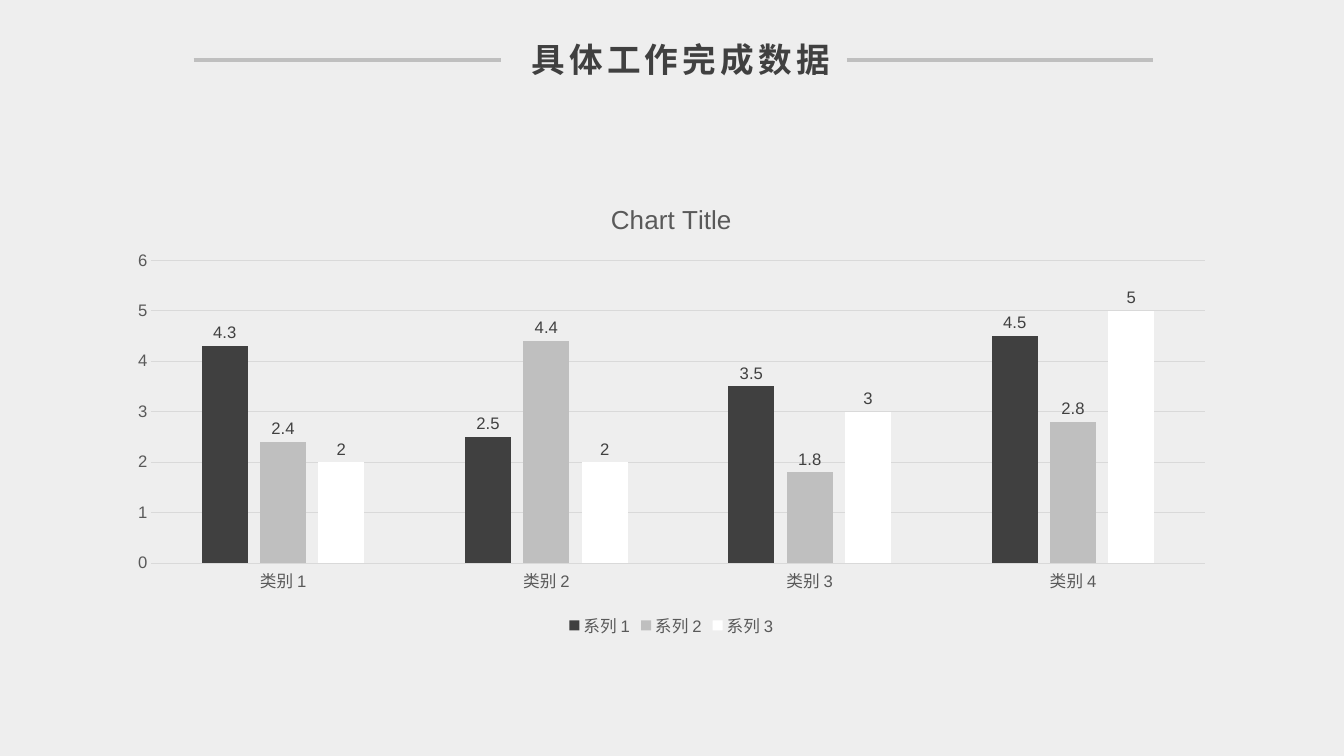
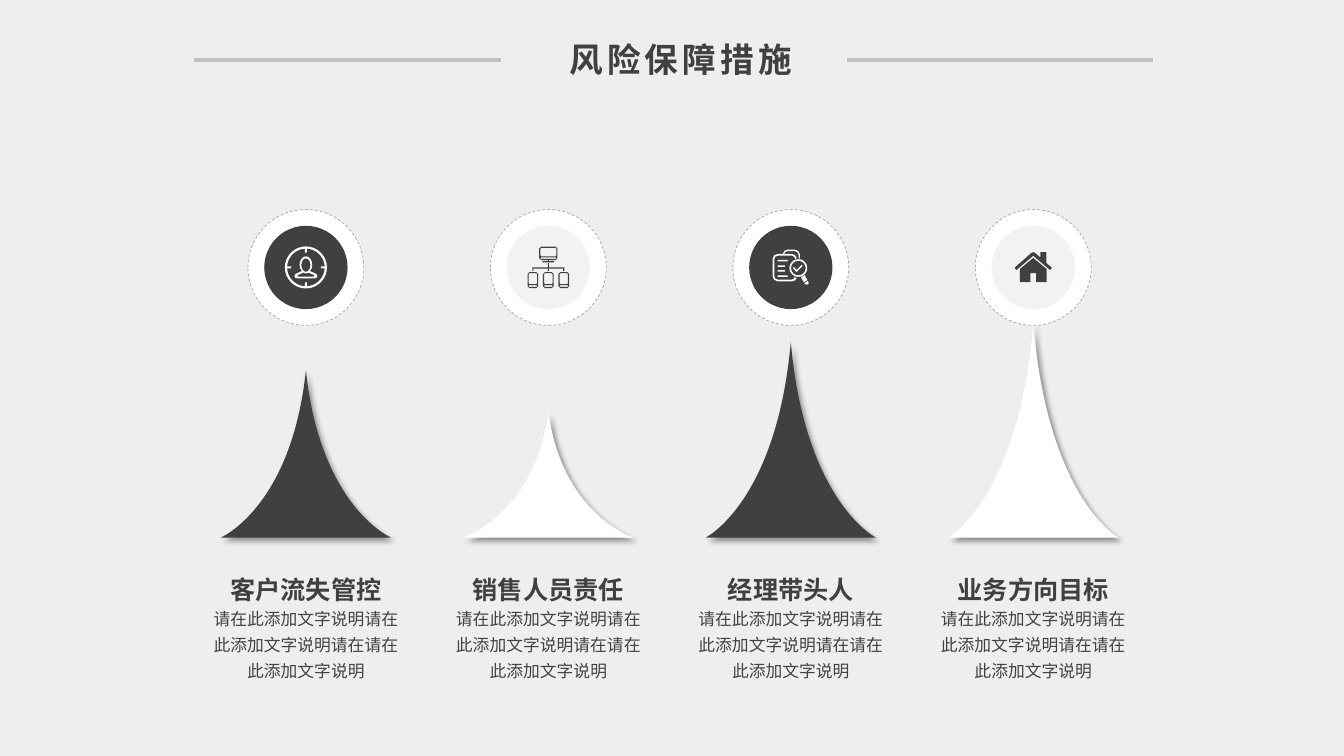
"""Build a two-slide work report: completion data and risk safeguards."""
from dataclasses import dataclass

from lxml import etree
from pptx import Presentation
from pptx.chart.data import CategoryChartData
from pptx.dml.color import RGBColor
from pptx.enum.chart import XL_CHART_TYPE, XL_LABEL_POSITION, XL_LEGEND_POSITION, XL_TICK_MARK
from pptx.enum.dml import MSO_LINE
from pptx.enum.shapes import MSO_CONNECTOR, MSO_SHAPE
from pptx.enum.text import MSO_ANCHOR, MSO_AUTO_SIZE, PP_ALIGN
from pptx.oxml.ns import qn
from pptx.util import Cm, Pt

CLUSTERED = XL_CHART_TYPE.COLUMN_CLUSTERED
OUTSIDE_END = XL_LABEL_POSITION.OUTSIDE_END
BOTTOM = XL_LEGEND_POSITION.BOTTOM
NO_TICK = XL_TICK_MARK.NONE
DASH = MSO_LINE.DASH
STRAIGHT = MSO_CONNECTOR.STRAIGHT
OVAL = MSO_SHAPE.OVAL
MIDDLE = MSO_ANCHOR.MIDDLE
NO_FIT = MSO_AUTO_SIZE.NONE
CENTER = PP_ALIGN.CENTER


@dataclass(frozen=True)
class Theme:
    """Colours, fonts and type sizes of the deck."""
    background: str = "EEEEEE"
    dark: str = "404040"
    body: str = "424242"
    axis: str = "595959"
    dashed: str = "A6A6A6"
    rule: str = "BFBFBF"
    grid: str = "D9D9D9"
    pale: str = "F2F2F2"
    white: str = "FFFFFF"
    latin: str = "Arial"
    chinese: str = "Noto Sans CJK SC"
    title_size: float = 24
    chart_title_size: float = 18.6
    caption_size: float = 18
    body_size: float = 12
    chart_size: float = 11.9


THEME = Theme()
TITLE_ONLY = 5
COLUMN_START, COLUMN_PITCH = 7.71, 6.11
DISC_Y, BASE_Y = 6.74, 13.55
DETAIL = "请在此添加文字说明请在此添加文字说明请在请在此添加文字说明"


def rgb(value):
    """Return a colour from its hexadecimal form."""
    return RGBColor.from_string(value)


def style_font(font, size, color, bold=False, name=THEME.latin):
    """Set the face, size, weight and colour of a font."""
    font.name, font.size, font.bold = name, Pt(size), bold
    font.color.rgb = rgb(color)


def add_run(paragraph, text, size, color, bold=False, name=THEME.latin):
    """Add a centred, formatted run with its East Asian face."""
    paragraph.alignment = CENTER
    run = paragraph.add_run()
    run.text = text
    style_font(run.font, size, color, bold, name)
    etree.SubElement(run.font._element, qn("a:ea"), typeface=THEME.chinese)
    return run


def add_rule(slide, start, end, y=1.52):
    """Draw one horizontal rule beside the title."""
    rule = slide.shapes.add_connector(STRAIGHT, Cm(start), Cm(y), Cm(end), Cm(y))
    rule.line.color.rgb = rgb(THEME.rule)
    rule.line.width = Pt(3)
    etree.SubElement(rule._element.spPr, qn("a:effectLst"))


def add_titled_slide(prs, text):
    """Add a slide with the shared title and its two rules."""
    slide = prs.slides.add_slide(prs.slide_layouts[TITLE_ONLY])
    frame = slide.shapes.title.text_frame
    frame.vertical_anchor, frame.auto_size = MIDDLE, NO_FIT
    title = add_run(frame.paragraphs[0], text, THEME.title_size, THEME.dark, True, THEME.chinese)
    title.font._element.set("spc", "300")
    add_rule(slide, 4.88, 12.62)
    add_rule(slide, 21.34, 29.06)
    return slide


def outline(start, *steps):
    """Return a closed contour; a step is a point or a cubic curve."""
    contour = [("a:moveTo", [start])]
    for step in steps:
        points = list(zip(step[::2], step[1::2]))
        contour.append(("a:lnTo" if len(points) == 1 else "a:cubicBezTo", points))
    return contour + [("a:close", [])]


def box(left, top, width, height, radius=0):
    """Return a rectangle contour with optional round corners."""
    right, bottom = left + width, top + height
    if not radius:
        return outline((left, top), (right, top), (right, bottom), (left, bottom))
    r, k = radius, radius * 0.45
    return outline(
        (left + r, top),
        (right - r, top), (right - k, top, right, top + k, right, top + r),
        (right, bottom - r), (right, bottom - k, right - k, bottom, right - r, bottom),
        (left + r, bottom), (left + k, bottom, left, bottom - k, left, bottom - r),
        (left, top + r), (left, top + k, left + k, top, left + r, top))


def ring(x, y, radius, stroke):
    """Return the two contours of a ring."""
    inner = radius - stroke
    return (box(x - radius, y - radius, 2 * radius, 2 * radius, radius)
            + box(x - inner, y - inner, 2 * inner, 2 * inner, inner))


def screen(left, top, width, height, chin):
    """Return a device with a display and a slot below it."""
    slot = top + height - chin
    return (box(left, top, width, height, 0.5)
            + box(left + 0.3, top + 0.3, width - 0.6, height - chin - 0.55, 0.2)
            + box(left + 0.3, slot, width - 0.6, chin - 0.3, 0.15))


def target_icon():
    """Return a person in a crosshair, in millimetres."""
    ticks = (box(-0.25, -4.75, 0.5, 1) + box(-0.25, 3.75, 0.5, 1)
             + box(-4.75, -0.25, 1, 0.5) + box(3.75, -0.25, 1, 0.5))
    figure = outline(
        (0, -2.8), (0.9, -2.8, 1.6, -1.8, 1.6, -0.6), (1.6, 0, 1.4, 0.5, 1, 0.9),
        (1.3, 1.1, 1.9, 1.3, 1.9, 1.3), (2.6, 1.5, 2.9, 1.8, 2.9, 2.2),
        (2.9, 2.7, 2.4, 2.75, 1.9, 2.75), (-1.9, 2.75),
        (-2.4, 2.75, -2.9, 2.7, -2.9, 2.2), (-2.9, 1.8, -2.6, 1.5, -1.9, 1.3),
        (-1.9, 1.3, -1.3, 1.1, -1, 0.9), (-1.4, 0.5, -1.6, 0, -1.6, -0.6),
        (-1.6, -1.8, -0.9, -2.8, 0, -2.8))
    head = outline(
        (0, -2.3), (0.65, -2.3, 1.15, -1.5, 1.15, -0.6), (1.15, 0.3, 0.65, 1.1, 0, 1.1),
        (-0.65, 1.1, -1.15, 0.3, -1.15, -0.6), (-1.15, -1.5, -0.65, -2.3, 0, -2.3))
    shoulders = outline(
        (-0.65, 1.3), (-1, 1.5, -1.7, 1.75, -1.7, 1.75), (-2.2, 1.9, -2.6, 2.3, -1.9, 2.3),
        (1.9, 2.3), (2.6, 2.3, 2.2, 1.9, 1.7, 1.75), (1.7, 1.75, 1, 1.5, 0.65, 1.3),
        (0.3, 1.6, -0.3, 1.6, -0.65, 1.3))
    return ring(0, 0, 5.3, 0.55) + ticks + figure + head + shoulders


def network_icon():
    """Return a monitor linked to three devices, in millimetres."""
    contours = (screen(-2.3, -5.25, 4.6, 3.4, 0.7) + box(-0.15, -1.85, 0.3, 0.25)
                + box(-1.5, -1.6, 3, 0.3, 0.1) + box(-0.15, -1.1, 0.3, 1.1)
                + box(-4.05, 0, 8.1, 0.3))
    for x in (-3.9, 0, 3.9):
        contours += box(x - 0.15, 0.3, 0.3, 0.55) + screen(x - 1.35, 1.15, 2.7, 4.05, 0.75)
    return contours


def audit_icon():
    """Return a case under a magnifier, in millimetres."""
    case = outline(
        (1, 2.4), (1.5, 2.7), (1.2, 3.2, 0.8, 3.5, 0.3, 3.5),
        (-3.3, 3.5), (-4, 3.5, -4.6, 2.9, -4.6, 2.2),
        (-4.6, -2.1), (-4.6, -2.8, -4, -3.4, -3.3, -3.4),
        (-2, -3.4), (-2, -4, -1.4, -4.5, -0.8, -4.5),
        (1, -4.5), (1.7, -4.5, 2.3, -3.9, 2.3, -3.2), (2.3, -2.2), (1.95, -2.45),
        (1.95, -3.2), (1.95, -3.7, 1.5, -4.1, 1, -4.1),
        (-0.8, -4.1), (-1.3, -4.1, -1.7, -3.8, -1.7, -3.4),
        (0.3, -3.4), (0.8, -3.4, 1.4, -3, 1.5, -2.4),
        (1.15, -2.1), (1.1, -2.6, 0.7, -2.95, 0.3, -2.95),
        (-3.3, -2.95), (-3.8, -2.95, -4.15, -2.6, -4.15, -2.1),
        (-4.15, 2.2), (-4.15, 2.7, -3.8, 3.05, -3.3, 3.05),
        (0.3, 3.05), (0.6, 3.05, 0.9, 2.8, 1, 2.4))
    handle = outline((3.5, 1.95), (2.6, 2.5), (3.3, 3.75), (4.2, 3.2))
    tip = outline((4.3, 3.45), (3.4, 3.95), (3.6, 4.4, 4, 4.4, 4.3, 4.25),
                  (4.6, 4.1, 4.6, 3.8, 4.3, 3.45))
    check = outline((1.5, 0.65), (0.8, -0.1), (0.5, 0.15), (1.5, 1.15), (3, -0.4), (2.75, -0.65))
    contours = case + ring(1.9, 0.15, 2.25, 0.4) + handle + tip + check
    for y, width in ((-1.9, 2.5), (-0.5, 1.8), (0.7, 1.8), (2, 2.5)):
        contours += box(-3.3, y, width, 0.35)
    return contours


def house_icon():
    """Return a house with a chimney, in millimetres."""
    roof = outline((4.25, 0.65), (0, -2.95), (-4.25, 0.65), (-4.7, 0.05), (-0.5, -3.65),
                   (-0.2, -3.95, 0.2, -3.95, 0.5, -3.65), (1.8, -2.5), (1.8, -3.9),
                   (3.3, -3.9), (3.3, -1.15), (4.7, 0.05))
    walls = outline((0, -2.4), (3.4, 0.4), (3.4, 3.7), (0.75, 3.7), (0.75, 1.4),
                    (-0.75, 1.4), (-0.75, 3.7), (-3.4, 3.7), (-3.4, 0.4))
    return roof + walls


def add_outline(slide, contours, x, y, color):
    """Draw millimetre contours around a point as one curved freeform."""
    placed = [(tag, [(Cm(x + px / 10), Cm(y + py / 10)) for px, py in points])
              for tag, points in contours]
    xs, ys = zip(*(point for _, points in placed for point in points))
    left, top = min(xs), min(ys)
    builder = slide.shapes.build_freeform(left, top)
    builder.add_line_segments([(max(xs), top), (max(xs), max(ys))])
    figure = builder.convert_to_shape()
    route = next(figure._element.iter(qn("a:path")))
    for step in list(route):
        route.remove(step)
    for tag, points in placed:
        step = etree.SubElement(route, qn(tag))
        for px, py in points:
            etree.SubElement(step, qn("a:pt"), x=str(px - left), y=str(py - top))
    paint(figure, color)
    return figure


def paint(figure, color):
    """Give a figure a plain fill without line or shadow."""
    figure.shadow.inherit = False
    figure.fill.solid()
    figure.fill.fore_color.rgb = rgb(color)
    figure.line.fill.background()


def add_disc(slide, x, diameter, color):
    """Draw a disc centred on the icon row."""
    disc = slide.shapes.add_shape(OVAL, Cm(x - diameter / 2), Cm(DISC_Y - diameter / 2),
                                  Cm(diameter), Cm(diameter))
    paint(disc, color)
    return disc


def add_peak(slide, x, height, color):
    """Draw a shadowed peak whose height is in centimetres."""
    h = height * 10
    contour = outline((21.5, 0), (21.5, 0, 3.6, -0.18 * h, 0, -h),
                      (-3.6, -0.18 * h, -21.5, 0, -21.5, 0))
    peak = add_outline(slide, contour, x, BASE_Y, color)
    effects = peak._element.spPr.find(qn("a:effectLst"))
    shadow = etree.SubElement(effects, qn("a:outerShdw"), blurRad=str(Pt(4)), dist=str(Pt(3)),
                              dir="2700000", algn="tl", rotWithShape="0")
    tint = etree.SubElement(shadow, qn("a:srgbClr"), val="000000")
    etree.SubElement(tint, qn("a:alpha"), val="40000")


def add_text(group, x, top, width, height, text, size, color, bold, name):
    """Add a centred text box below a peak."""
    label = group.shapes.add_textbox(Cm(x - width / 2), Cm(top), Cm(width), Cm(height))
    label.text_frame.word_wrap = True
    paragraph = label.text_frame.paragraphs[0]
    paragraph.line_spacing = 1.3
    add_run(paragraph, text, size, color, bold, name)


def add_measure(slide, x, caption, icon, height, is_dark):
    """Draw one safeguard column: disc, icon, peak and text."""
    rim = add_disc(slide, x, 2.92, THEME.white)
    rim.line.color.rgb = rgb(THEME.dashed)
    rim.line.width, rim.line.dash_style = Pt(0.5), DASH
    add_disc(slide, x, 2.1, THEME.dark if is_dark else THEME.pale)
    add_outline(slide, icon, x, DISC_Y, THEME.white if is_dark else THEME.dark)
    add_peak(slide, x, height, THEME.dark if is_dark else THEME.white)
    group = slide.shapes.add_group_shape()
    add_text(group, x, 14.12, 5.92, 1.17, caption, THEME.caption_size, THEME.dark, True, THEME.latin)
    add_text(group, x, 15.06, 5.21, 2.18, DETAIL, THEME.body_size, THEME.body, False, THEME.chinese)


def add_data_chart(slide, categories, series):
    """Add the clustered column chart; series are (name, values, colour)."""
    data = CategoryChartData()
    data.categories = categories
    for name, values, _ in series:
        data.add_series(name, values)
    chart = slide.shapes.add_chart(CLUSTERED, Cm(2.92), Cm(4.6), Cm(28), Cm(11.58), data).chart
    style_font(chart.font, THEME.chart_size, THEME.axis)
    chart.has_title = True
    heading = chart.chart_title.text_frame.paragraphs[0]
    add_run(heading, "Chart Title", THEME.chart_title_size, THEME.axis)
    chart.has_legend = True
    chart.legend.position, chart.legend.include_in_layout = BOTTOM, False
    for axis in (chart.category_axis, chart.value_axis):
        axis.major_tick_mark = axis.minor_tick_mark = NO_TICK
    values_axis = chart.value_axis
    values_axis.minimum_scale, values_axis.maximum_scale, values_axis.major_unit = 0, 6, 1
    values_axis.format.line.fill.background()
    for target in (chart.category_axis, values_axis.major_gridlines):
        target.format.line.color.rgb = rgb(THEME.grid)
        target.format.line.width = Pt(0.75)
    plot = chart.plots[0]
    plot.gap_width, plot.overlap, plot.vary_by_categories = 219, -27, False
    for columns, (_, _, color) in zip(plot.series, series):
        columns.format.fill.solid()
        columns.format.fill.fore_color.rgb = rgb(color)
        labels = columns.data_labels
        labels.show_value, labels.position = True, OUTSIDE_END
        style_font(labels.font, THEME.chart_size, THEME.dark)


def main():
    """Build and save the deck."""
    prs = Presentation()
    prs.slide_width, prs.slide_height = Cm(33.87), Cm(19.05)
    backdrop = prs.slide_master.background.fill
    backdrop.solid()
    backdrop.fore_color.rgb = rgb(THEME.background)
    title = prs.slide_layouts[TITLE_ONLY].placeholders[0]
    title.left, title.top, title.width, title.height = Cm(12.75), Cm(0.86), Cm(8.81), Cm(1.27)

    results = add_titled_slide(prs, "具体工作完成数据")
    add_data_chart(results, ("类别 1", "类别 2", "类别 3", "类别 4"), (
        ("系列 1", (4.3, 2.5, 3.5, 4.5), THEME.dark),
        ("系列 2", (2.4, 4.4, 1.8, 2.8), THEME.rule),
        ("系列 3", (2, 2, 3, 5), THEME.white)))

    safeguards = add_titled_slide(prs, "风险保障措施")
    measures = (("客户流失管控", target_icon(), 4.22), ("销售人员责任", network_icon(), 3.16),
                ("经理带头人", audit_icon(), 4.93), ("业务方向目标", house_icon(), 5.41))
    for index, (caption, icon, height) in enumerate(measures):
        x = COLUMN_START + index * COLUMN_PITCH
        add_measure(safeguards, x, caption, icon, height, index % 2 == 0)
    prs.save("out.pptx")


if __name__ == "__main__":
    main()
